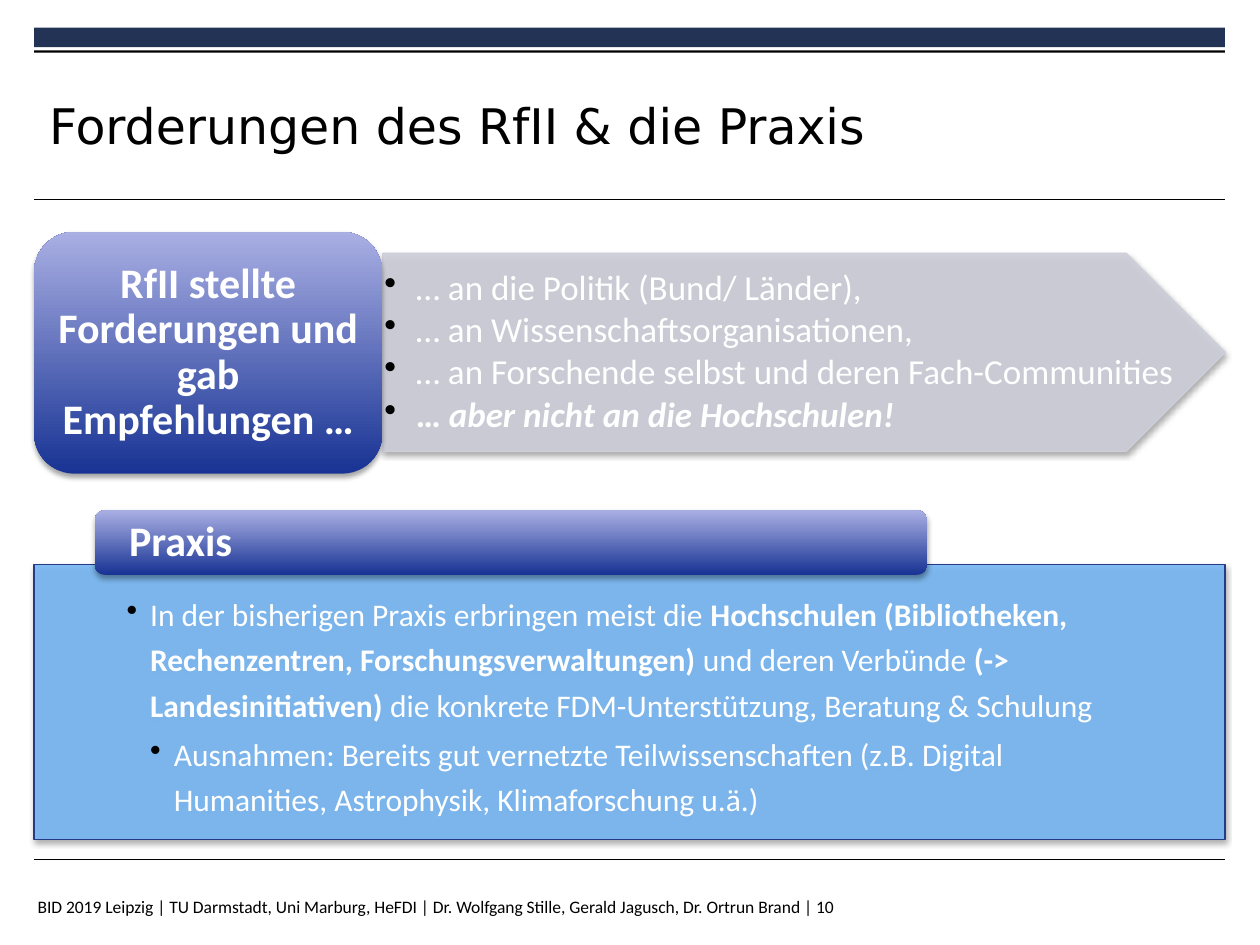
from lxml import etree
from pptx import Presentation
from pptx.dml.color import RGBColor
from pptx.enum import shapes, text
from pptx.oxml import ns
from pptx.util import Pt

COLORS = {
    "navy": "233356", "black": "000000", "white": "FFFFFF",
    "sky": "76B6F2", "edge": "263B86", "silver": "CDCED9",
    "deep": "183394", "lilac": "A9AFE3",
}
LEFT, WIDTH = 19.5, 680.5
KINDS = shapes.MSO_SHAPE


def color(name):
    return RGBColor.from_string(COLORS[name])


def write(box, paragraphs, size, font="Calibri", ink="white", align=text.PP_ALIGN.LEFT,
          anchor=text.MSO_ANCHOR.MIDDLE, margins=(0, 0, 0, 0), spacing=0.9,
          indent=None, wrap=True):
    frame = box.text_frame
    frame.word_wrap = wrap
    frame.vertical_anchor = anchor
    frame.margin_left, frame.margin_top, frame.margin_right, frame.margin_bottom = map(Pt, margins)
    for index, (level, runs) in enumerate(paragraphs):
        para = frame.paragraphs[0] if index == 0 else frame.add_paragraph()
        para.alignment = align
        para.line_spacing = spacing
        if indent:
            properties = para._p.get_or_add_pPr()
            properties.set("marL", str(Pt(indent * level)))
            properties.set("indent", str(-Pt(indent)))
            bullet_color = etree.SubElement(properties, ns.qn("a:buClr"))
            etree.SubElement(bullet_color, ns.qn("a:srgbClr"), val=COLORS["black"])
            etree.SubElement(properties, ns.qn("a:buChar"), char="•")
            para.level = level
            para.space_after = Pt(round(size * 0.13, 1))
        for words, style in runs:
            span = para.add_run()
            span.text = words
            span.font.name = font
            span.font.size = Pt(size)
            span.font.color.rgb = color(ink)
            span.font.bold = "b" in style
            span.font.italic = "i" in style


deck = Presentation()
deck.slide_width, deck.slide_height = Pt(720), Pt(540)
page = deck.slides.add_slide(deck.slide_layouts[6])

for top, height, name in [(15.75, 11.25, "navy"), (28.8, 1.3, "black")]:
    bar = page.shapes.add_shape(KINDS.RECTANGLE, Pt(LEFT), Pt(top), Pt(WIDTH), Pt(height))
    bar.shadow.inherit = False
    bar.fill.solid()
    bar.fill.fore_color.rgb = color(name)
    bar.line.fill.background()

for top in (114.25, 491):
    rule = page.shapes.add_connector(shapes.MSO_CONNECTOR.STRAIGHT,
                                     Pt(LEFT), Pt(top), Pt(LEFT + WIDTH), Pt(top))
    rule.line.color.rgb = color("black")
    rule.line.width = Pt(0.6)
    etree.SubElement(rule._element.spPr, ns.qn("a:effectLst"))

footer = page.shapes.add_textbox(Pt(14.4), Pt(508.3), Pt(510), Pt(31.7))
write(footer, [(0, [("BID 2019 Leipzig | TU Darmstadt, Uni Marburg, HeFDI | "
                     "Dr. Wolfgang Stille, Gerald Jagusch, Dr. Ortrun Brand | 10", "")])],
      size=10, ink="black", anchor=text.MSO_ANCHOR.TOP, margins=(7.2, 3.6, 7.2, 3.6),
      spacing=1.0, wrap=False)

title = page.shapes.add_textbox(Pt(28.1), Pt(38.2), Pt(541.4), Pt(66.2))
write(title, [(0, [("Forderungen des RfII & die Praxis", "")])],
      size=28, font="DejaVu Sans", ink="black", spacing=1.0)

blocks = {}
for role, kind, place, fill, edge in [
    ("practice", KINDS.RECTANGLE, (LEFT, 322.7, WIDTH, 156.9), "sky", "edge"),
    ("practice heading", KINDS.ROUNDED_RECTANGLE, (54, 291.6, 475.9, 36.9), None, None),
    ("addressees", KINDS.PENTAGON, (218.7, 144.7, 481.5, 113.2), "silver", "silver"),
    ("demands", KINDS.ROUNDED_RECTANGLE, (LEFT, 132.5, 199, 138.2), None, None),
]:
    block = page.shapes.add_shape(kind, *map(Pt, place))
    blocks[role] = block
    if fill:
        block.fill.solid()
        block.fill.fore_color.rgb = color(fill)
        for shade in block._element.spPr.iter(ns.qn("a:srgbClr")):
            etree.SubElement(shade, ns.qn("a:alpha"), val="90000")
        block.line.color.rgb = color(edge)
        block.line.width = Pt(0.75)
    else:
        block.fill.gradient()
        block.fill.gradient_angle = 90
        for stop, name in zip(block.fill.gradient_stops, ("deep", "lilac")):
            stop.color.rgb = color(name)
        block.line.fill.background()
    block.shadow.inherit = False
    effects = block._element.spPr.find(ns.qn("a:effectLst"))
    shadow = etree.SubElement(effects, ns.qn("a:outerShdw"), blurRad=str(Pt(3.1)),
                              dist=str(Pt(1.8)), dir="5400000", rotWithShape="0")
    shade = etree.SubElement(shadow, ns.qn("a:srgbClr"), val=COLORS["black"])
    etree.SubElement(shade, ns.qn("a:alpha"), val="35000")

write(blocks["practice"], [
    (1, [("In der bisherigen Praxis erbringen meist die ", ""),
         ("Hochschulen (Bibliotheken, Rechenzentren, Forschungsverwaltungen) ", "b"),
         ("und deren Verbünde ", ""),
         ("(-> Landesinitiativen) ", "b"),
         ("die konkrete FDM-Unterstützung, Beratung & Schulung", "")]),
    (2, [("Ausnahmen: Bereits gut vernetzte Teilwissenschaften (z.B. Digital Humanities, "
          "Astrophysik, Klimaforschung u.ä.)", "")]),
], size=18, anchor=text.MSO_ANCHOR.TOP, margins=(52.8, 13, 52.8, 10), spacing=1.2, indent=13.5)

write(blocks["practice heading"], [(0, [("Praxis", "b")])], size=24, margins=(18, 0, 18, 0))

write(blocks["addressees"], [
    (1, [("… an die Politik (Bund/ Länder),", "")]),
    (1, [("… an Wissenschaftsorganisationen,", "")]),
    (1, [("… an Forschende selbst und deren Fach-Communities", "")]),
    (1, [("… ", "b"), ("aber nicht an die Hochschulen!", "bi")]),
], size=20, margins=(1, 1, 1, 1), indent=18)

write(blocks["demands"], [(0, [("RfII stellte Forderungen und gab Empfehlungen …", "b")])],
      size=24, align=text.PP_ALIGN.CENTER, margins=(7.2, 3.6, 7.2, 3.6))

deck.save("out.pptx")
